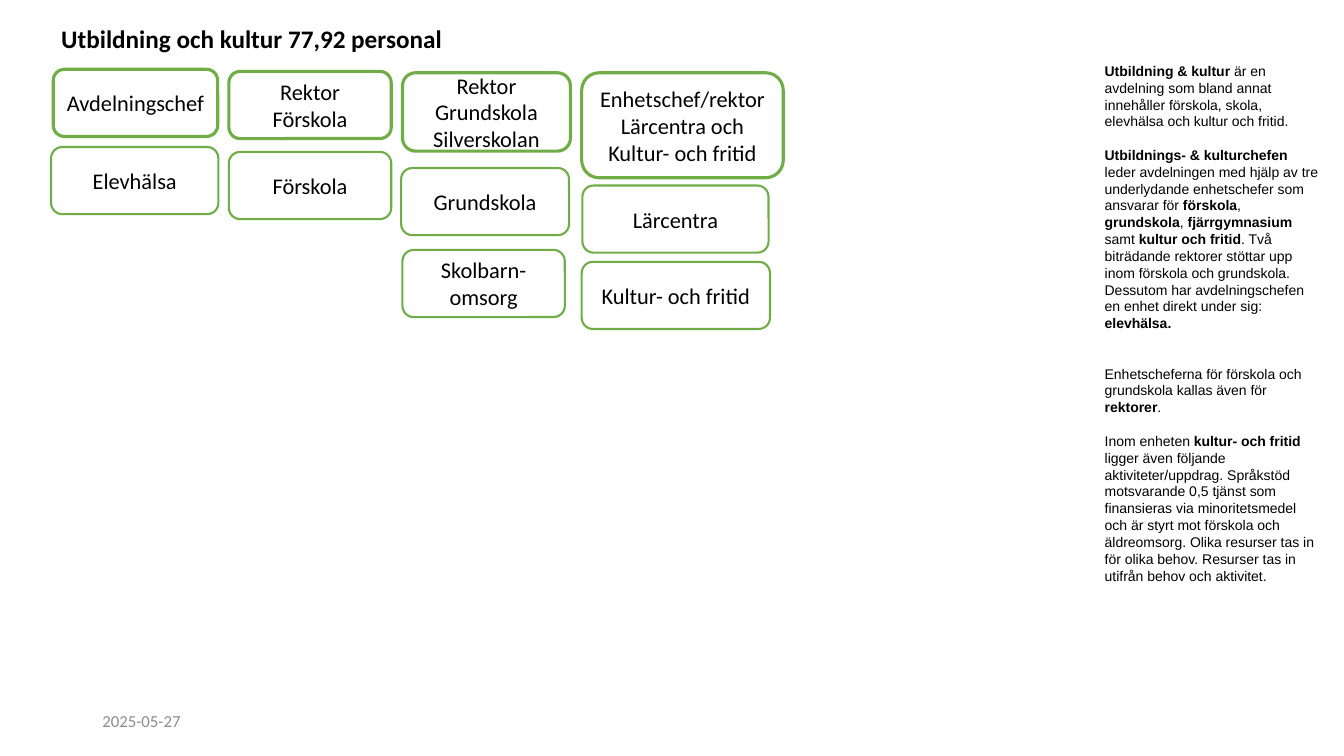
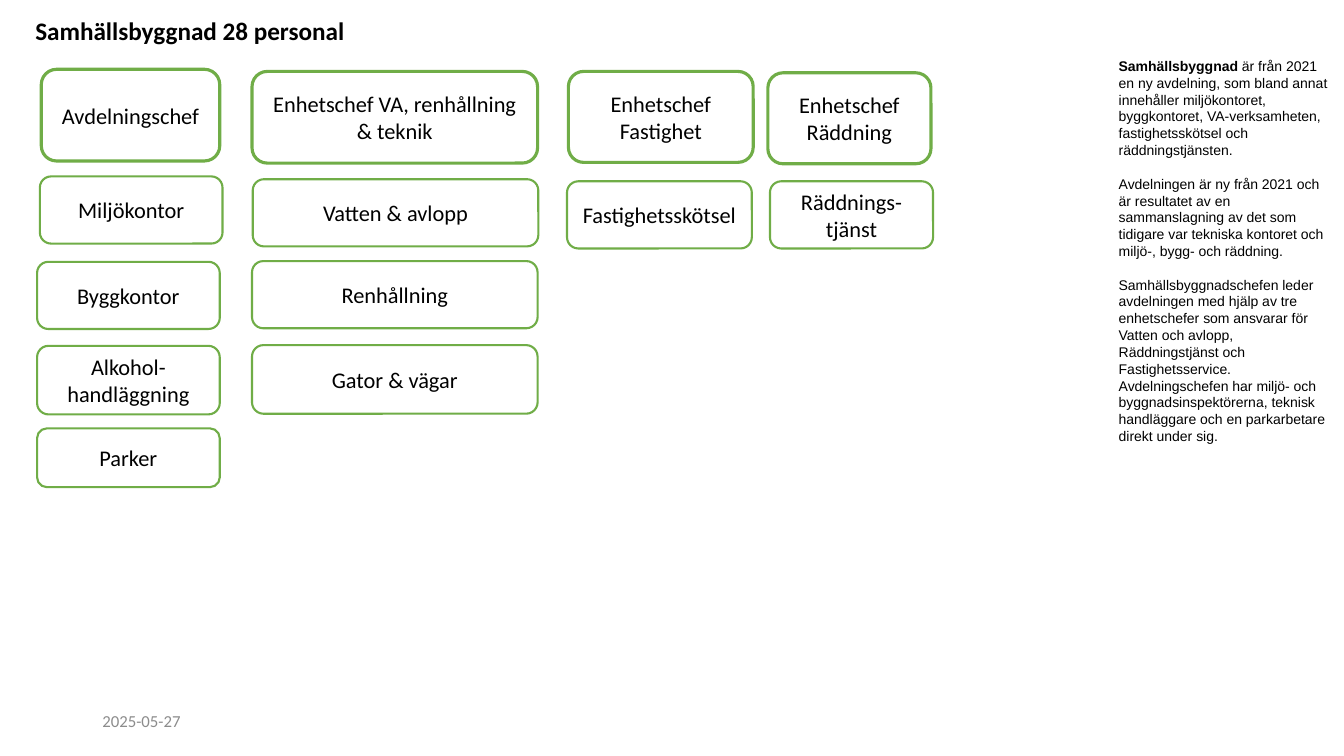
from dataclasses import dataclass

from pptx import Presentation
from pptx.dml.color import RGBColor
from pptx.enum.shapes import MSO_SHAPE
from pptx.enum.text import MSO_ANCHOR, MSO_AUTO_SIZE, PP_ALIGN
from pptx.util import Pt

ROUNDED = MSO_SHAPE.ROUNDED_RECTANGLE
LEFT, CENTER = PP_ALIGN.LEFT, PP_ALIGN.CENTER
TOP, MIDDLE = MSO_ANCHOR.TOP, MSO_ANCHOR.MIDDLE
NO_FIT = MSO_AUTO_SIZE.NONE
TITLE_ONLY = 5


@dataclass(frozen=True)
class Theme:
    ink: RGBColor = RGBColor(0x00, 0x00, 0x00)
    muted: RGBColor = RGBColor(0x8C, 0x8C, 0x8C)
    green: RGBColor = RGBColor(0x70, 0xAD, 0x47)
    font: str = "Calibri"
    sidebar_font: str = "Arial"
    title_size: float = 18
    box_size: float = 16
    date_size: float = 12
    sidebar_size: float = 10
    chief_line: float = 2.25
    unit_line: float = 1.5


THEME = Theme()


@dataclass
class Box:
    """A box in a column; dx and dw adjust the column's left and width."""
    text: str
    top: float
    height: float = 48
    dx: float = 0
    dw: float = 0


def write(tf, text, size=THEME.box_size, font=THEME.font, color=THEME.ink,
          bold=False, align=LEFT, anchor=TOP, gaps=()):
    """Write one paragraph per line; ** switches bold on and off."""
    tf.word_wrap = True
    tf.auto_size = NO_FIT
    tf.vertical_anchor = anchor
    for i, line in enumerate(text.split("\n")):
        p = tf.add_paragraph() if i else tf.paragraphs[0]
        p.alignment = align
        p.space_before = Pt(gaps[i] if i < len(gaps) else 0)
        for j, part in enumerate(line.split("**")):
            if part:
                r = p.add_run()
                r.text = part
                r.font.size = Pt(size)
                r.font.name = font
                r.font.bold = bold or j % 2 == 1
                r.font.color.rgb = color


def add_text(s, box, text, **fmt):
    sp = s.shapes.add_textbox(*map(Pt, box))
    write(sp.text_frame, text, **fmt)


def add_title(s, box, text):
    sp = s.shapes.title
    sp.left, sp.top, sp.width, sp.height = map(Pt, box)
    write(sp.text_frame, text, size=THEME.title_size, bold=True)


def add_box(s, box, text, line):
    sp = s.shapes.add_shape(ROUNDED, *map(Pt, box))
    sp.shadow.inherit = False
    sp.fill.background()
    sp.line.color.rgb = THEME.green
    sp.line.width = Pt(line)
    write(sp.text_frame, text, align=CENTER, anchor=MIDDLE)


def add_columns(s, origin, columns):
    """Place columns of boxes from the origin; the first box is the chief."""
    x, y = origin
    for left, width, boxes in columns:
        for i, b in enumerate(boxes):
            add_box(s, (x + left + b.dx, y + b.top, width + b.dw, b.height),
                    b.text, THEME.unit_line if i else THEME.chief_line)


def add_sidebar(s, box, sidebar):
    gaps, lines = zip(*sidebar)
    add_text(s, box, "\n".join(lines), size=THEME.sidebar_size,
             font=THEME.sidebar_font, gaps=gaps)


def add_department(prs, title, title_box, origin, columns, sidebar,
                   sidebar_box):
    s = prs.slides.add_slide(prs.slide_layouts[TITLE_ONLY])
    add_title(s, title_box, title)
    add_columns(s, origin, columns)
    add_sidebar(s, sidebar_box, sidebar)
    add_text(s, (66, 500.5, 216, 29), "2025-05-27", size=THEME.date_size,
             color=THEME.muted, anchor=MIDDLE)


# Columns: left, width, boxes. Sidebar: gap before, paragraph.
EDUCATION = dict(
    title="Utbildning och kultur 77,92 personal",
    title_box=(36.5, 13, 298, 29),
    origin=(36, 48),
    columns=[
        (2, 117.5, [Box("Avdelningschef", 1.5),
                    Box("Elevhälsa", 57, dx=-1.5, dw=2)]),
        (127.5, 116, [Box("Rektor Förskola", 3), Box("Förskola", 60.5)]),
        (251.5, 120, [Box("Rektor Grundskola\nSilverskolan", 4, 56),
                      Box("Grundskola", 72, dx=-1),
                      Box("Skolbarn-\nomsorg", 130.5, dw=-4)]),
        (379.5, 144, [
            Box("Enhetschef/rektor Lärcentra och Kultur- och fritid", 4, 75),
            Box("Lärcentra", 84.5, dx=0.5, dw=-11),
            Box("Kultur- och fritid", 139, dw=-9.5)]),
    ],
    sidebar_box=(782, 41, 168, 383),
    sidebar=[
        (0, "**Utbildning & kultur **är en avdelning som bland annat "
            "innehåller förskola, skola, elevhälsa och kultur och fritid."),
        (12, "**Utbildnings- & kulturchefen **leder avdelningen med hjälp av "
             "tre underlydande enhetschefer som ansvarar för **förskola**, "
             "**grundskola**, **fjärrgymnasium **samt **kultur och fritid**. "
             "Två biträdande rektorer stöttar upp inom förskola och "
             "grundskola. Dessutom har avdelningschefen en enhet direkt "
             "under sig: **elevhälsa.**"),
        (24, "Enhetscheferna för förskola och grundskola kallas även för "
             "**rektorer**."),
        (12, "Inom enheten **kultur- och fritid **ligger även följande "
             "aktiviteter/uppdrag. Språkstöd motsvarande 0,5 tjänst som "
             "finansieras via minoritetsmedel och är styrt mot förskola och "
             "äldreomsorg. Olika resurser tas in för olika behov. Resurser "
             "tas in utifrån behov och aktivitet."),
    ],
)

COMMUNITY = dict(
    title="Samhällsbyggnad 28 personal",
    title_box=(18, 7, 295, 29),
    origin=(24, 48),
    columns=[
        (2.5, 130.5, [Box("Avdelningschef", 1.5, 65.5, dx=3, dw=-3),
                      Box("Miljökontor", 78, dx=2),
                      Box("Byggkontor", 139),
                      Box("Alkohol-\nhandläggning", 199, 49),
                      Box("Parker", 258, 42)]),
        (156, 204, [Box("Enhetschef VA, renhållning & teknik", 3, 65.5),
                    Box("Vatten & avlopp", 80, dx=0.5),
                    Box("Renhållning", 138.5),
                    Box("Gator & vägar", 198.5, 49)]),
        (382, 132, [Box("Enhetschef Fastighet", 3, 65),
                    Box("Fastighetsskötsel", 81.5, dx=-1)]),
        (524.5, 116.5, [Box("Enhetschef Räddning", 4, 65),
                        Box("Räddnings-\ntjänst", 81.5, dx=1.5)]),
    ],
    sidebar_box=(792, 37.5, 168, 286),
    sidebar=[
        (0, "**Samhällsbyggnad **är från 2021 en ny avdelning, som bland "
            "annat innehåller miljökontoret, byggkontoret, VA-verksamheten, "
            "fastighetsskötsel och räddningstjänsten."),
        (12, "Avdelningen är ny från 2021 och är resultatet av en "
             "sammanslagning av det som tidigare var tekniska kontoret och "
             "miljö-, bygg- och räddning."),
        (12, "Samhällsbyggnadschefen leder avdelningen med hjälp av tre "
             "enhetschefer som ansvarar för Vatten och avlopp, "
             "Räddningstjänst och Fastighetsservice. Avdelningschefen har "
             "miljö- och byggnadsinspektörerna, teknisk handläggare och en "
             "parkarbetare direkt under sig."),
    ],
)


def main():
    prs = Presentation()
    prs.slide_width, prs.slide_height = Pt(960), Pt(540)
    for department in (EDUCATION, COMMUNITY):
        add_department(prs, **department)
    prs.save("out.pptx")


if __name__ == "__main__":
    main()
